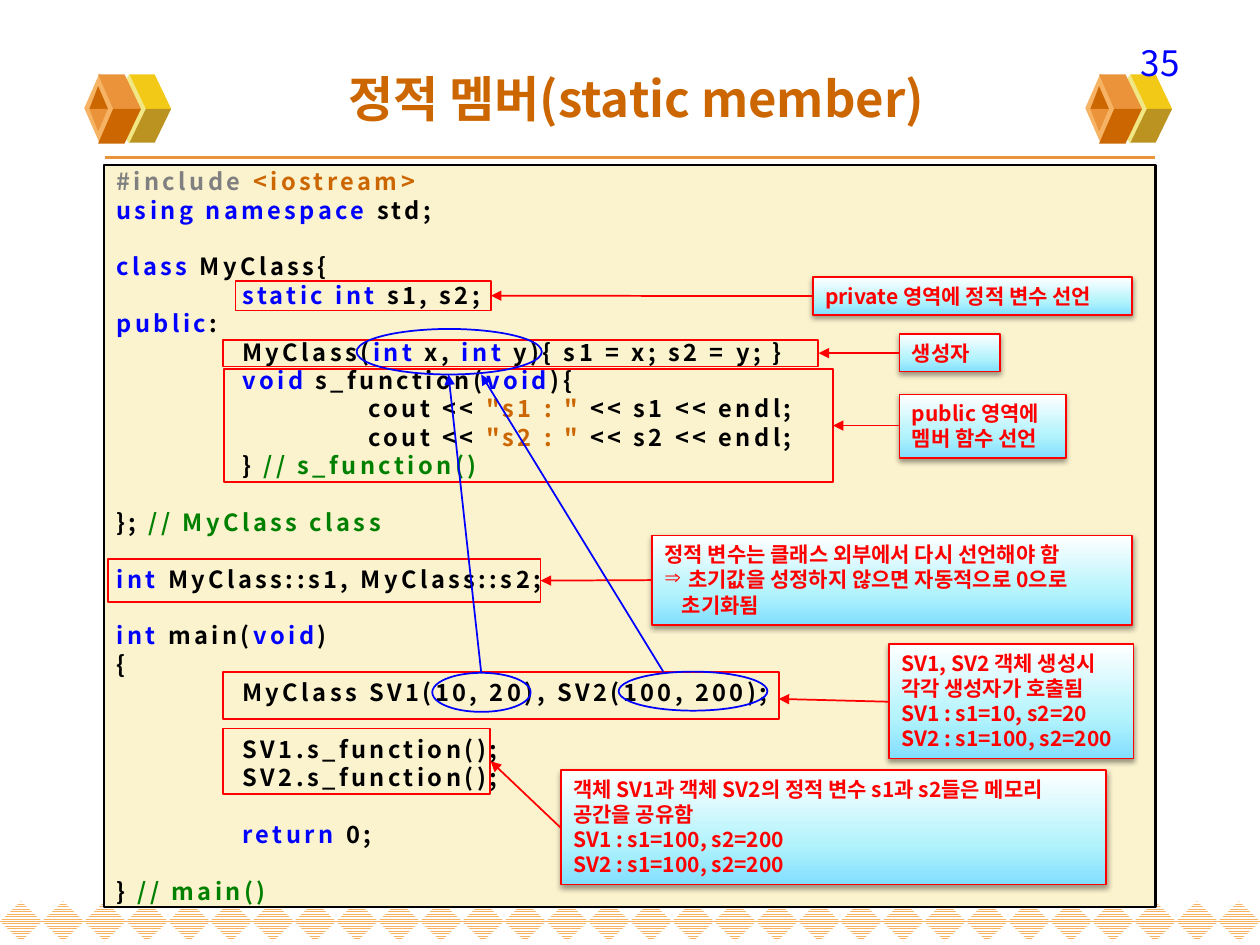
from lxml import etree
from pptx import Presentation
from pptx.dml.color import RGBColor
from pptx.enum.dml import MSO_PATTERN
from pptx.enum.shapes import MSO_CONNECTOR, MSO_SHAPE
from pptx.enum.text import MSO_ANCHOR, PP_ALIGN
from pptx.oxml.ns import qn
from pptx.util import Pt

RECT, OVAL, GEM = MSO_SHAPE.RECTANGLE, MSO_SHAPE.OVAL, MSO_SHAPE.DIAMOND
STRAIGHT, STRIPES = MSO_CONNECTOR.STRAIGHT, MSO_PATTERN.NARROW_HORIZONTAL
MIDDLE, TOP = MSO_ANCHOR.MIDDLE, MSO_ANCHOR.TOP
LEFT, MID, RIGHT, FULL = (PP_ALIGN.LEFT, PP_ALIGN.CENTER,
                          PP_ALIGN.RIGHT, PP_ALIGN.JUSTIFY)
FONT = "Noto Sans CJK KR"
HEX = {
    "black": "000000", "white": "FFFFFF", "gray": "808080", "blue": "0000FF",
    "rust": "CC6600", "green": "008000", "red": "FF0000", "cream": "FBF2CE",
    "orange": "EB933B", "peach": "F5B363", "lemon": "F1E785",
    "gold": "F3C917", "olive": "BB9321", "sky": "81DEFF", "ice": "B2F3FC",
}

# Code lines as (colour, text) runs; an empty line is a gap
CODE = [
    [("gray", "#include "), ("rust", "<iostream>")],
    [("blue", "using namespace"), ("black", " std;")],
    [],
    [("blue", "class "), ("black", "MyClass{")],
    [("blue", "\tstatic int"), ("black", " s1, s2;")],
    [("blue", "public"), ("black", ":")],
    [("black", "\tMyClass("), ("blue", "int "), ("black", "x, "),
     ("blue", "int "), ("black", "y){ s1 = x; s2 = y; }")],
    [("blue", "\tvoid "), ("black", "s_function("), ("blue", "void"),
     ("black", "){")],
    [("black", "\t\tcout << "), ("rust", '"s1 : " '),
     ("black", "<< s1 << endl;")],
    [("black", "\t\tcout << "), ("rust", '"s2 : " '),
     ("black", "<< s2 << endl;")],
    [("black", "\t} "), ("green", "// s_function()")],
    [],
    [("black", "};"), ("green", " // MyClass class")],
    [],
    [("blue", "int "), ("black", "MyClass::s1, MyClass::s2;")],
    [],
    [("blue", "int "), ("black", "main("), ("blue", "void"), ("black", ")")],
    [("black", "{")],
    [("black", "\tMyClass SV1(10, 20), SV2(100, 200);")],
    [],
    [("black", "\tSV1.s_function();")],
    [("black", "\tSV2.s_function();")],
    [],
    [("blue", "\treturn "), ("black", "0;")],
    [],
    [("black", "}"), ("green", " // main()")],
]

# Red frames and blue rings around code: left, top, width, height
FRAMES = [(61.9, 319.5, 247, 24.5), (134.6, 160.8, 146, 16.6),
          (127.6, 194.2, 340, 15.3), (128, 210.8, 348, 64.8),
          (127.6, 416.2, 152.6, 37.4), (127.6, 383.8, 317.5, 26.9)]
RINGS = [(247, 384.5, 56.2, 22.3), (203.8, 188, 105.8, 26),
         (353.5, 383.8, 85, 22.3)]
NOTES = [
    ((464.4, 158.4, 182.5, 21.6), ["private 영역에 정적 변수 선언"]),
    ((514, 190.8, 57.6, 21.6), ["생성자"]),
    ((514, 225.4, 95, 36.4), ["public 영역에", "멤버 함수 선언"]),
    ((372.6, 306, 274.5, 51.1),
     ["정적 변수는 클래스 외부에서 다시 선언해야 함",
      "⇒초기값을 성정하지 않으면 자동적으로 0으로", "초기화됨"]),
    ((320.4, 440, 311.6, 65.5),
     ["객체 SV1과 객체 SV2의 정적 변수 s1과 s2들은 메모리",
      "공간을 공유함", "SV1 : s1=100, s2=200", "SV2 : s1=100, s2=200"]),
    ((507.8, 368, 140, 65.5),
     ["SV1, SV2 객체 생성시", "각각 생성자가 호출됨",
      "SV1 : s1=10, s2=20", "SV2 : s1=100, s2=200"]),
]
ARROWS = [
    ("red", 372.6, 331.5, 309, 331.8), ("red", 320.4, 473, 280.4, 435),
    ("red", 514, 243.2, 476, 243.2), ("red", 464.4, 169.2, 280.6, 169),
    ("red", 514, 201.8, 467.8, 201.8), ("red", 507.8, 401, 445, 399.4),
    ("blue", 275, 384.5, 256.3, 214), ("blue", 379, 383.8, 275, 214),
]

# Cube faces as points from the cube's top left corner
FACES = [("gold", [(35.2, 20.2), (49.6, 20.2), (40.2, .5), (25.8, .5)]),
         ("olive", [(35.2, 20.2), (49.6, 20.2), (40.2, 39.6), (25.8, 39.6)])]
FRONT = [("orange", [(16.5, 20.2), (32.4, 20.2), (23, .5), (7.9, .5)]),
         ("rust", [(16.5, 20.2), (32.4, 20.2), (23, 40), (7.9, 40)]),
         ("rust", [(7.9, 7.2), (2.9, 20.2), (13.5, 20.2)]),
         ("orange", [(7.9, 33.1), (2.9, 20.2), (13.5, 20.2)])]


def rgb(name):
    return RGBColor.from_string(HEX[name])


def sub(node, tag, **attrs):
    return etree.SubElement(node, qn(tag), attrs)


def style(run, size, color, bold=True):
    font = run.font
    font.size, font.bold, font.name = Pt(size), bold, FONT
    font.color.rgb = rgb(color)
    sub(run._r.rPr, "a:ea", typeface=FONT)


def paint(shape, fill=None, line=None, width=1):
    shape.shadow.inherit = False
    if fill:
        shape.fill.solid()
        shape.fill.fore_color.rgb = rgb(fill)
    else:
        shape.fill.background()
    if line:
        shape.line.color.rgb = rgb(line)
        shape.line.width = Pt(width)
    else:
        shape.line.fill.background()
    return shape


def add(slide, kind, box, *look):
    return paint(slide.shapes.add_shape(kind, *map(Pt, box)), *look)


def link(slide, color, ends, width=1, arrow=True):
    line = slide.shapes.add_connector(STRAIGHT, *map(Pt, ends))
    line.line.color.rgb = rgb(color)
    line.line.width = Pt(width)
    if arrow:
        sub(line.line._get_or_add_ln(), "a:tailEnd", type="triangle")
    sub(line._element.spPr, "a:effectLst")


def border(slide, box, count=30):
    left, top, width, high = box
    step = width / count
    for i in range(count):
        gem = add(slide, GEM, (left + i * step, top, step, high))
        gem.fill.patterned()
        gem.fill.pattern = STRIPES
        gem.fill.fore_color.rgb = rgb("peach")
        gem.fill.back_color.rgb = rgb("white")


def cube(slide, left, top):
    def draw(faces):
        for color, dots in faces:
            dots = [(Pt(left + x), Pt(top + y)) for x, y in dots]
            pen = slide.shapes.build_freeform(*dots[0])
            pen.add_line_segments(dots[1:])
            paint(pen.convert_to_shape(), color)

    add(slide, GEM, (left + 13.7, top + .5, 23.8, 39.6), "lemon")
    draw(FACES)
    add(slide, GEM, (left, top, 17.3, 39.6), "peach")
    draw(FRONT)


def header(slide, box):
    title = slide.shapes.title
    title.left, title.top, title.width, title.height = map(Pt, box)
    frame = title.text_frame
    frame.text = "정적 멤버(static member)"
    frame.vertical_anchor = MIDDLE
    frame.paragraphs[0].alignment = MID
    style(frame.paragraphs[0].runs[0], 28, "rust")


def number(slide, box):
    frame = slide.shapes.add_textbox(*map(Pt, box)).text_frame
    frame.word_wrap = True
    frame.text = "35"
    frame.paragraphs[0].alignment = RIGHT
    style(frame.paragraphs[0].runs[0], 20, "blue", False)


def listing(slide, box, size=13.5, tab=72):
    frame = add(slide, RECT, box, "cream", "black", 1.5).text_frame
    frame.word_wrap, frame.vertical_anchor = True, MIDDLE
    pitch, gap, para = Pt(size * 1.2), False, frame.paragraphs[0]
    for i, row in enumerate(CODE):
        if row:
            para = frame.add_paragraph() if i else para
            para.alignment, para.line_spacing = LEFT, pitch
            para.space_before = pitch if gap else Pt(0)
            tabs = sub(para._p.get_or_add_pPr(), "a:tabLst")
            for level in (1, 2):
                sub(tabs, "a:tab", pos=str(Pt(level * tab)), algn="l")
        for color, text in row:
            run = para.add_run()
            run.text = text
            style(run, size, color)
            run._r.rPr.set("spc", "200")
        gap = not row


def note(slide, box, rows, size=12):
    shape = add(slide, RECT, box, "white", "red")
    # Three-stop gradient, running upwards
    shape.fill.gradient()
    shape.fill.gradient_angle = 90
    stops = shape._element.spPr.find(qn("a:gradFill")).find(qn("a:gsLst"))
    for stop in list(stops):
        stops.remove(stop)
    for pos, name in ((0, "sky"), (35, "ice"), (100, "white")):
        stop = sub(stops, "a:gs", pos=str(pos * 1000))
        sub(stop, "a:srgbClr", val=HEX[name])
    # Soft shadow below
    glow = sub(shape._element.spPr.find(qn("a:effectLst")), "a:outerShdw",
               blurRad=str(Pt(3.1)), dist=str(Pt(1.6)), dir="5400000",
               rotWithShape="0")
    sub(sub(glow, "a:srgbClr", val=HEX["black"]), "a:alpha", val="38000")

    frame = shape.text_frame
    frame.word_wrap, frame.vertical_anchor = True, TOP
    frame.margin_right = 0
    frame.text = "\n".join(row.lstrip("⇒") for row in rows)
    for row, para in zip(rows, frame.paragraphs):
        para.alignment, para.line_spacing = FULL, Pt(size * 1.2)
        style(para.runs[0], size, "red")
        props = para._p.get_or_add_pPr()
        if row.startswith("⇒"):
            props.set("marL", str(Pt(13.7)))
            props.set("indent", str(-Pt(13.7)))
            sub(props, "a:buChar", char="⇒")
        elif row == "초기화됨":
            props.set("marL", str(Pt(10)))


def main():
    deck = Presentation()
    deck.slide_width, deck.slide_height = Pt(720), Pt(540)
    slide = deck.slides.add_slide(deck.slide_layouts[5])
    # Backdrop and heading
    border(slide, (0, 515, 720, 23))
    link(slide, "orange", (60, 90, 660, 90), 2.25, False)
    for left in (48.2, 620.2):
        cube(slide, left, 42)
    header(slide, (39.6, 21.6, 648, 68.4))
    number(slide, (513.4, 20.2, 167.8, 21.6))
    # Code with its marks and notes
    listing(slide, (59.5, 94.3, 601, 424))
    for box in FRAMES:
        add(slide, RECT, box, None, "red")
    for box, rows in NOTES:
        note(slide, box, rows)
    for box in RINGS:
        add(slide, OVAL, box, None, "blue")
    for color, *ends in ARROWS:
        link(slide, color, ends)
    deck.save("out.pptx")


if __name__ == "__main__":
    main()
